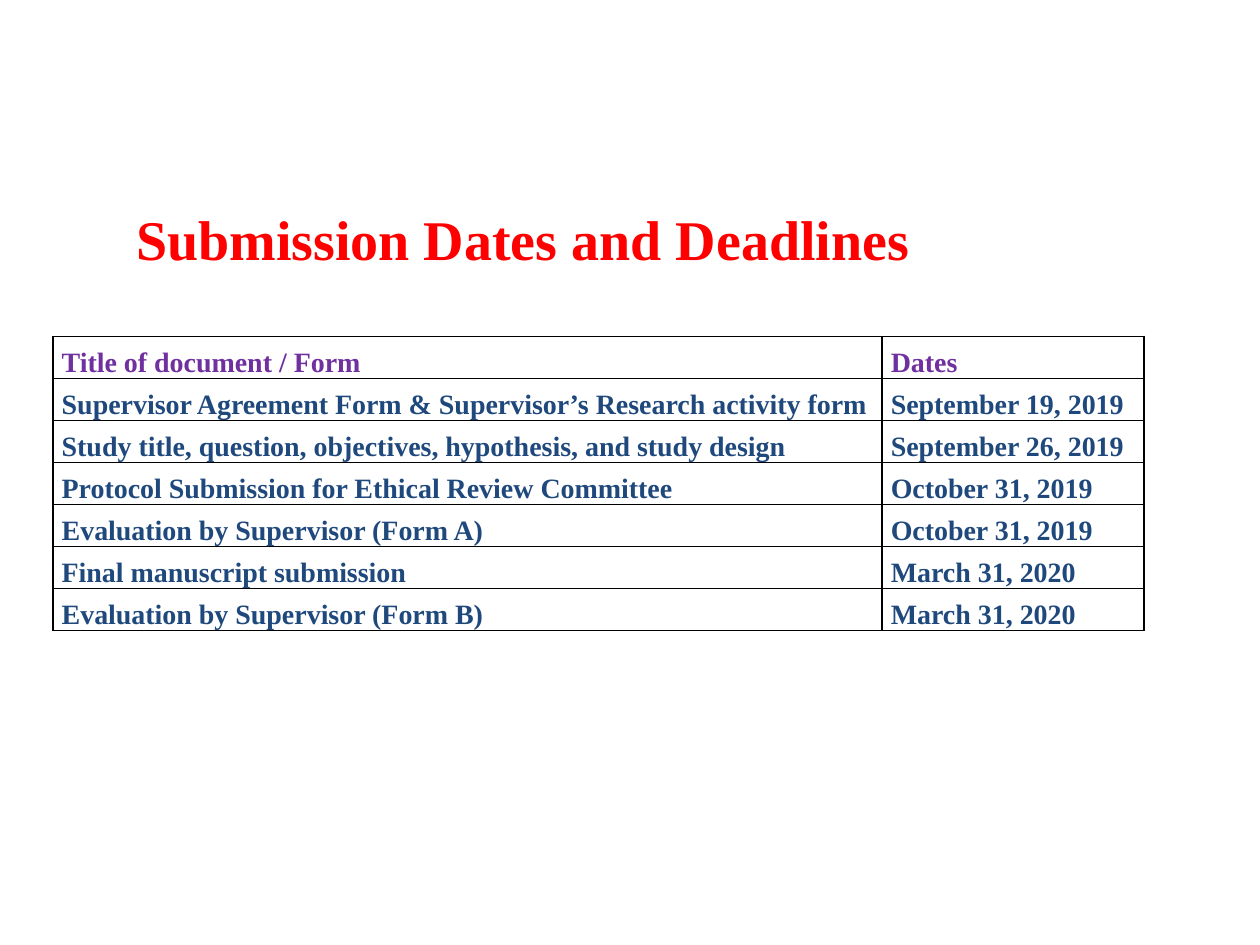
from lxml import etree
from pptx import Presentation
from pptx.dml.color import RGBColor
from pptx.enum.text import MSO_ANCHOR
from pptx.oxml.ns import qn
from pptx.util import Inches, Pt

TOP = MSO_ANCHOR.TOP
FONT = "Times New Roman"
COLORS = {"title": "FF0000", "head": "7030A0", "body": "1F497D", "line": "000000"}
TITLE = "Submission Dates and Deadlines"
ROWS = [
    ("Title of document / Form", "Dates"),
    ("Supervisor Agreement Form & Supervisor’s Research activity form", "September 19, 2019"),
    ("Study title, question, objectives, hypothesis, and study design", "September 26, 2019"),
    ("Protocol Submission for Ethical Review Committee", "October 31, 2019"),
    ("Evaluation by Supervisor (Form A)", "October 31, 2019"),
    ("Final manuscript submission", "March 31, 2020"),
    ("Evaluation by Supervisor (Form B)", "March 31, 2020"),
]
WIDTHS = [6.58, 2.08]
HEIGHT = 0.33


def write(frame, text, size=16, color="body", space=1.0):
    para = frame.paragraphs[0]
    para.line_spacing = space
    run = para.add_run()
    run.text = text
    font = run.font
    font.name, font.size, font.bold = FONT, Pt(size), True
    font.color.rgb = RGBColor.from_string(COLORS[color])


def inset(box, side, top, bottom):
    box.margin_left = box.margin_right = Inches(side)
    box.margin_top, box.margin_bottom = Inches(top), Inches(bottom)


def border(cell):
    props = cell._tc.get_or_add_tcPr()
    for at, side in enumerate(("a:lnL", "a:lnR", "a:lnT", "a:lnB")):
        line = etree.Element(qn(side), w=str(Pt(1)))
        fill = etree.SubElement(line, qn("a:solidFill"))
        etree.SubElement(fill, qn("a:srgbClr"), val=COLORS["line"])
        props.insert(at, line)


deck = Presentation()
deck.slide_width, deck.slide_height = Inches(10), Inches(7.5)
slide = deck.slides.add_slide(deck.slide_layouts[6])

table = slide.shapes.add_table(
    len(ROWS), len(WIDTHS), Inches(0.42), Inches(2.67),
    Inches(sum(WIDTHS)), Inches(HEIGHT * len(ROWS))).table
table.first_row = table.horz_banding = False
for col, width in zip(table.columns, WIDTHS):
    col.width = Inches(width)
for r, texts in enumerate(ROWS):
    table.rows[r].height = Inches(HEIGHT)
    for c, text in enumerate(texts):
        cell = table.cell(r, c)
        inset(cell, 0.07, 0, 0)
        cell.fill.background()
        border(cell)
        write(cell.text_frame, text, color="body" if r else "head", space=1.35)

frame = slide.shapes.add_textbox(
    Inches(1.08), Inches(1.43), Inches(8.42), Inches(1.05)).text_frame
frame.word_wrap = True
frame.vertical_anchor = TOP
inset(frame, 0, 0.19, 0.04)
write(frame, TITLE, size=32, color="title")

deck.save("out.pptx")
